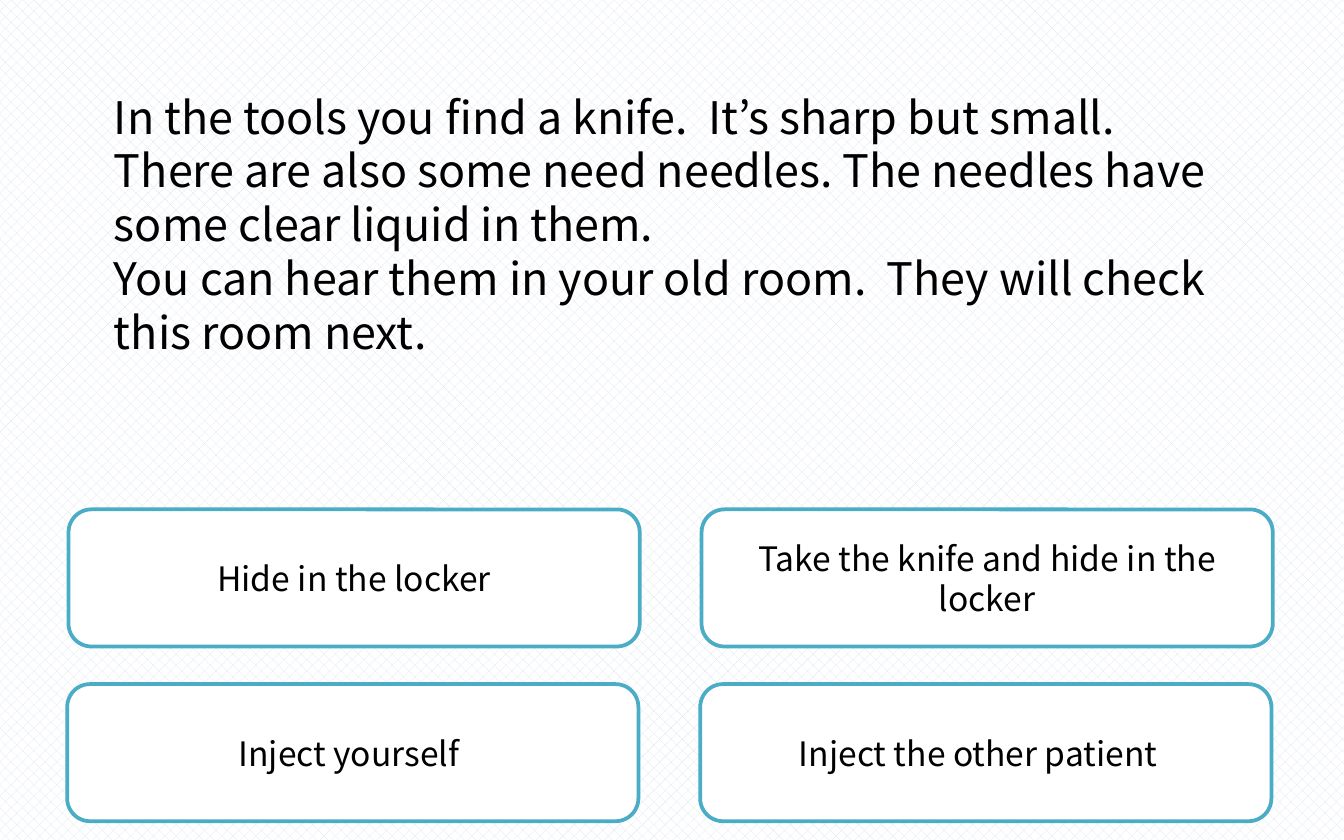
from pptx import Presentation
from pptx.dml.color import RGBColor
from pptx.enum.dml import MSO_PATTERN as Pattern
from pptx.enum.shapes import MSO_SHAPE as Shape
from pptx.enum.text import MSO_ANCHOR as Anchor, PP_ALIGN as Align
from pptx.util import Inches, Pt


def color(hex_value):
    return RGBColor.from_string(hex_value)


def write(frame, paragraphs, size, align):
    frame.word_wrap = True
    frame.vertical_anchor = Anchor.MIDDLE
    frame.text = "\n".join(paragraphs)
    for paragraph in frame.paragraphs:
        paragraph.alignment = align
        font = paragraph.runs[0].font
        for key, value in {"name": "Noto Sans CJK KR", "size": Pt(size)}.items():
            setattr(font, key, value)
        font.color.rgb = color("000000")


deck = Presentation()
deck.slide_width, deck.slide_height = Inches(10), Inches(6.25)
scene = deck.slides.add_slide(deck.slide_layouts[6])

backdrop = scene.background.fill
backdrop.patterned()
backdrop.pattern = Pattern.from_xml("pct40")
backdrop.fore_color.rgb = color("DCE6F2")
backdrop.back_color.rgb = color("FFFFFF")

choices = [
    ["Hide in the locker", "Take the knife and hide in the locker"],
    ["Inject yourself ", "Inject the other patient  "],
]
left, top = 0.51, 3.79
column_step, row_step, row_shift = 4.71, 1.3, -0.01
for row, row_choices in enumerate(choices):
    for column, label in enumerate(row_choices):
        choice = scene.shapes.add_shape(
            Shape.ROUNDED_RECTANGLE,
            Inches(left + column * column_step + row * row_shift),
            Inches(top + row * row_step),
            Inches(4.25),
            Inches(1.02),
        )
        choice.shadow.inherit = False
        choice.fill.solid()
        choice.fill.fore_color.rgb = color("FFFFFF")
        choice.line.color.rgb = color("4BACC6")
        choice.line.width = Pt(2)
        write(choice.text_frame, [label], 18, Align.CENTER)

story = scene.shapes.add_textbox(Inches(0.75), Inches(0.13), Inches(8.5), Inches(3.07))
write(
    story.text_frame,
    [
        "In the tools you find a knife.  It’s sharp but small. There are also some "
        "need needles. The needles have some clear liquid in them.",
        "You can hear them in your old room.  They will check this room next.",
    ],
    24,
    Align.LEFT,
)

deck.save("out.pptx")
